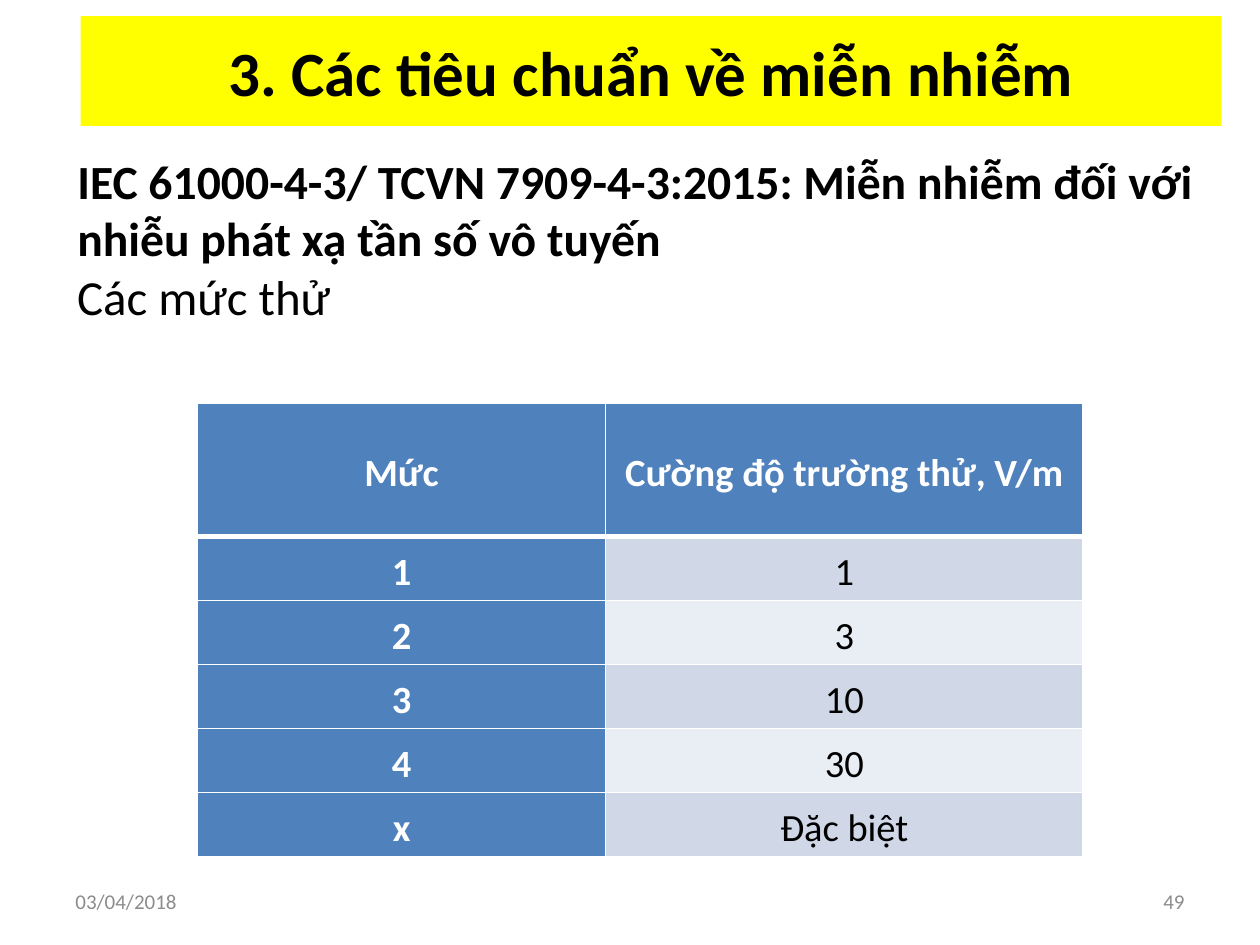
from lxml.etree import SubElement
from pptx import Presentation
from pptx.dml.color import RGBColor
from pptx.enum.text import MSO_ANCHOR, MSO_AUTO_SIZE, PP_ALIGN
from pptx.oxml.ns import qn
from pptx.util import Pt

BLACK = RGBColor(0x00, 0x00, 0x00)
WHITE = RGBColor(0xFF, 0xFF, 0xFF)
YELLOW = RGBColor(0xFF, 0xFF, 0x00)
GRAY = RGBColor(0x8C, 0x8C, 0x8C)
BLUE = RGBColor(0x4F, 0x81, 0xBD)
BANDS = [RGBColor(0xE9, 0xED, 0xF4), RGBColor(0xD0, 0xD8, 0xE8)]


def write(frame, text, size, color=BLACK, bold=False, align=PP_ALIGN.LEFT,
          anchor=MSO_ANCHOR.TOP, before=0, spacing=1.0):
    frame.word_wrap = True
    frame.vertical_anchor = anchor
    paragraph = frame.paragraphs[0]
    paragraph.alignment = align
    paragraph.space_before = Pt(before)
    paragraph.line_spacing = spacing
    run = paragraph.add_run()
    run.text = text
    run.font.name = "Calibri"
    run.font.size = Pt(size)
    run.font.bold = bold
    run.font.color.rgb = color


def add_border(cell, side, width):
    line = SubElement(cell._tc.get_or_add_tcPr(), qn(f"a:ln{side}"), w=str(Pt(width)))
    SubElement(SubElement(line, qn("a:solidFill")), qn("a:srgbClr"), val=str(WHITE))


prs = Presentation()
prs.slide_width, prs.slide_height = Pt(720), Pt(540)
slide = prs.slides.add_slide(prs.slide_layouts[1])

# Title and standard
title, standard = slide.placeholders
title.left, title.top, title.width, title.height = Pt(46), Pt(9.2), Pt(652), Pt(62.8)
title.fill.solid()
title.fill.fore_color.rgb = YELLOW
write(title.text_frame, "3. Các tiêu chuẩn về miễn nhiễm", 36, bold=True,
      align=PP_ALIGN.CENTER, anchor=MSO_ANCHOR.MIDDLE)

standard.left, standard.top, standard.width, standard.height = Pt(37), Pt(83), Pt(659), Pt(62.8)
write(standard.text_frame,
      "IEC 61000-4-3/ TCVN 7909-4-3:2015: Miễn nhiễm đối với nhiễu phát xạ tần số vô tuyến",
      27.2, bold=True, before=5.4)
standard.text_frame.auto_size = MSO_AUTO_SIZE.NONE
list_format = standard.text_frame.paragraphs[0]._p.get_or_add_pPr()
list_format.set("marL", "0")
list_format.set("indent", "0")
SubElement(list_format, qn("a:buNone"))

# Subheading and footer
levels_heading = slide.shapes.add_textbox(Pt(37), Pt(148.5), Pt(659), Pt(51))
write(levels_heading.text_frame, "Các mức thử", 28, before=5.6)

for left, text, align in [(36, "03/04/2018", PP_ALIGN.LEFT), (516, "49", PP_ALIGN.RIGHT)]:
    footer = slide.shapes.add_textbox(Pt(left), Pt(500.5), Pt(168), Pt(28.8))
    write(footer.text_frame, text, 12, color=GRAY, align=align, anchor=MSO_ANCHOR.MIDDLE)

# Test levels
test_levels = [
    ("Mức", "Cường độ trường thử, V/m"),
    ("1", "1"),
    ("2", "3"),
    ("3", "10"),
    ("4", "30"),
    ("x", "Đặc biệt"),
]
levels_table = slide.shapes.add_table(len(test_levels), 2, Pt(113), Pt(230.5), Pt(506), Pt(259)).table
levels_table.columns[0].width, levels_table.columns[1].width = Pt(233), Pt(273)

for r, level in enumerate(test_levels):
    levels_table.rows[r].height = Pt(36.6 if r else 76)
    for c, text in enumerate(level):
        cell = levels_table.cell(r, c)
        heading = r == 0 or c == 0
        cell.margin_left = cell.margin_right = cell.margin_top = cell.margin_bottom = 0
        cell.vertical_anchor = MSO_ANCHOR.MIDDLE
        for side, width in [("L", 1), ("R", 1), ("T", 3 if r == 1 else 1), ("B", 3 if r == 0 else 1)]:
            add_border(cell, side, width)
        cell.fill.solid()
        cell.fill.fore_color.rgb = BLUE if heading else BANDS[r % 2]
        write(cell.text_frame, text, 22, color=WHITE if heading else BLACK, bold=heading,
              align=PP_ALIGN.CENTER, anchor=MSO_ANCHOR.MIDDLE, before=6, spacing=1.15)

prs.save("out.pptx")
